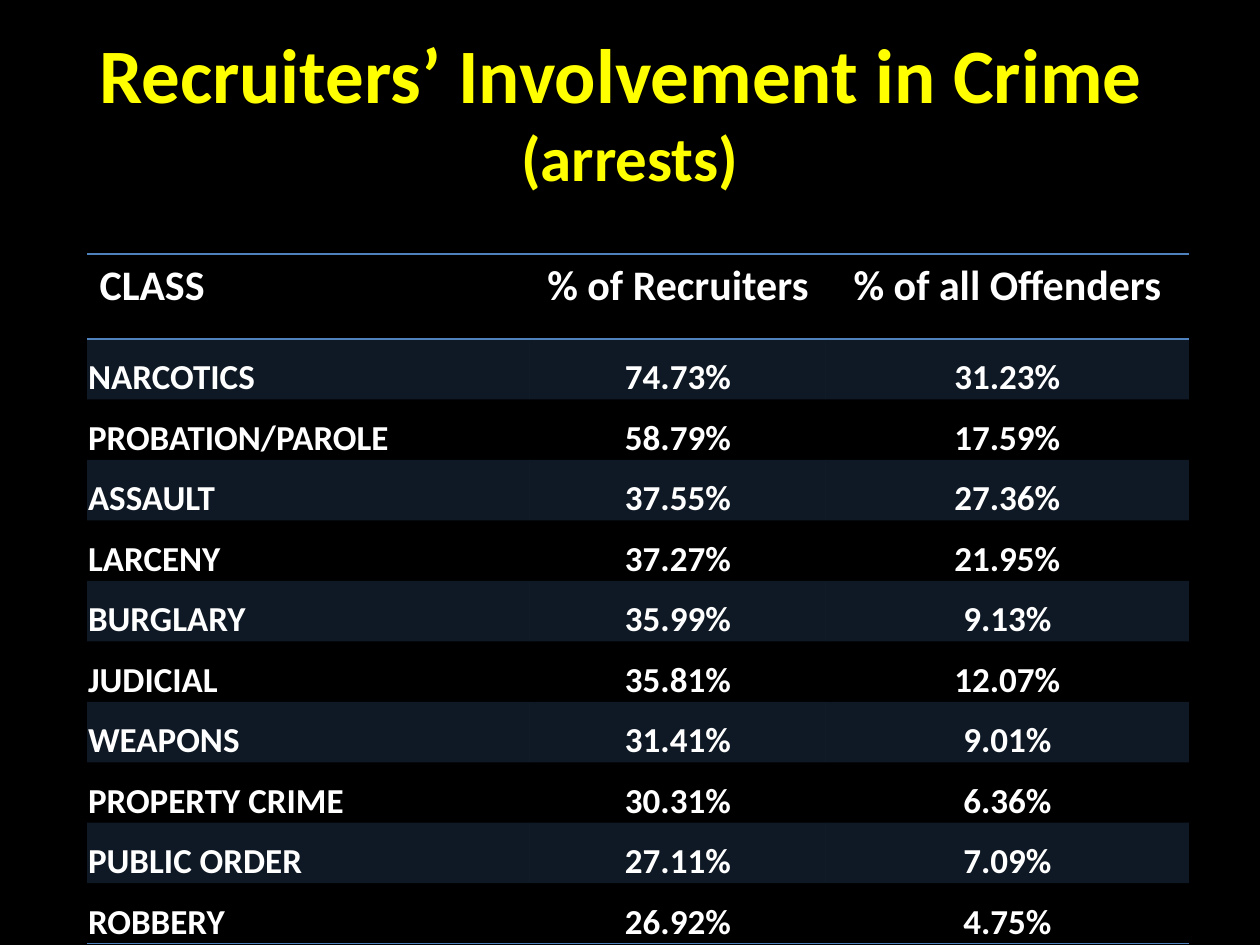
from lxml import etree
from pptx import Presentation
from pptx.dml.color import RGBColor
from pptx.enum.text import MSO_ANCHOR, PP_ALIGN
from pptx.oxml.ns import qn
from pptx.util import Pt

CENTER, LEFT = PP_ALIGN.CENTER, PP_ALIGN.LEFT
TOP, MIDDLE, BOTTOM = MSO_ANCHOR.TOP, MSO_ANCHOR.MIDDLE, MSO_ANCHOR.BOTTOM

TITLE = [("Recruiters’ Involvement in Crime ", 44), ("(arrests)", 36)]
HEADINGS = ("CLASS", "% of Recruiters", "% of all Offenders")
ARRESTS = [
    ("NARCOTICS", "74.73%", "31.23%"),
    ("PROBATION/PAROLE", "58.79%", "17.59%"),
    ("ASSAULT", "37.55%", "27.36%"),
    ("LARCENY", "37.27%", "21.95%"),
    ("BURGLARY", "35.99%", "9.13%"),
    ("JUDICIAL", "35.81%", "12.07%"),
    ("WEAPONS", "31.41%", "9.01%"),
    ("PROPERTY CRIME", "30.31%", "6.36%"),
    ("PUBLIC ORDER", "27.11%", "7.09%"),
    ("ROBBERY", "26.92%", "4.75%"),
]
COLORS = {"background": "000000", "title": "FFFF00", "text": "FFFFFF", "accent": "4F81BD"}
FONT = "Calibri"
BAND_OPACITY = 20
PLAIN_STYLE = "{2D5ABB26-0587-4C30-8999-92F81FD0307C}"

SLIDE_SIZE = (1260, 945)
TITLE_BOX = (63, 57, 1134, 107)
TABLE_LEFT, TABLE_TOP = 87, 254
COLUMN_WIDTHS = (443, 296, 363)
HEADER_HEIGHT, BODY_HEIGHT = 85, 605


def px(length):
    return round(length * 914400 / 126)


def color(name):
    return RGBColor.from_string(COLORS[name])


def style_run(run, size, color_name):
    run.font.name = FONT
    run.font.size = Pt(size)
    run.font.bold = True
    run.font.color.rgb = color(color_name)


def add_rules(cell, sides):
    properties = cell._tc.get_or_add_tcPr()
    for position, side in enumerate(sides):
        line = etree.Element(qn(f"a:ln{side}"), w=str(Pt(1)))
        fill = etree.SubElement(line, qn("a:solidFill"))
        etree.SubElement(fill, qn("a:srgbClr"), val=COLORS["accent"])
        properties.insert(position, line)


def fill_band(cell):
    cell.fill.solid()
    cell.fill.fore_color.rgb = color("accent")
    shade = cell._tc.tcPr.find(f".//{qn('a:srgbClr')}")
    etree.SubElement(shade, qn("a:alpha"), val=str(BAND_OPACITY * 1000))


def add_title(slide):
    frame = slide.shapes.add_textbox(*map(px, TITLE_BOX)).text_frame
    frame.word_wrap = True
    frame.vertical_anchor = MIDDLE
    frame.text = "\v".join(text for text, _ in TITLE)
    heading = frame.paragraphs[0]
    heading.alignment = CENTER
    for run, (_, size) in zip(heading.runs, TITLE):
        style_run(run, size, "title")


def add_arrests_table(slide):
    rows = [HEADINGS] + ARRESTS
    table = slide.shapes.add_table(
        len(rows), len(HEADINGS), px(TABLE_LEFT), px(TABLE_TOP),
        px(sum(COLUMN_WIDTHS)), px(HEADER_HEIGHT + BODY_HEIGHT)).table
    table._tbl.tblPr.find(qn("a:tableStyleId")).text = PLAIN_STYLE
    for column, width in zip(table.columns, COLUMN_WIDTHS):
        column.width = px(width)
    for index, values in enumerate(rows):
        is_header = index == 0
        table.rows[index].height = px(HEADER_HEIGHT if is_header else BODY_HEIGHT / len(ARRESTS))
        for column, value in enumerate(values):
            cell = table.cell(index, column)
            cell.text = value
            cell.vertical_anchor = TOP if is_header else BOTTOM
            entry = cell.text_frame.paragraphs[0]
            entry.alignment = CENTER if column else LEFT
            style_run(entry.runs[0], 24 if is_header else 20, "text")
            if not is_header:
                cell.margin_left = cell.margin_right = cell.margin_top = px(1)
                cell.margin_bottom = 0
            if index % 2:
                fill_band(cell)
            else:
                cell.fill.background()
            if is_header:
                add_rules(cell, "TB")
            elif index == len(ARRESTS):
                add_rules(cell, "B")


def main():
    deck = Presentation()
    deck.slide_width, deck.slide_height = map(px, SLIDE_SIZE)
    slide = deck.slides.add_slide(deck.slide_layouts[6])
    slide.background.fill.solid()
    slide.background.fill.fore_color.rgb = color("background")
    add_title(slide)
    add_arrests_table(slide)
    deck.save("out.pptx")


if __name__ == "__main__":
    main()
